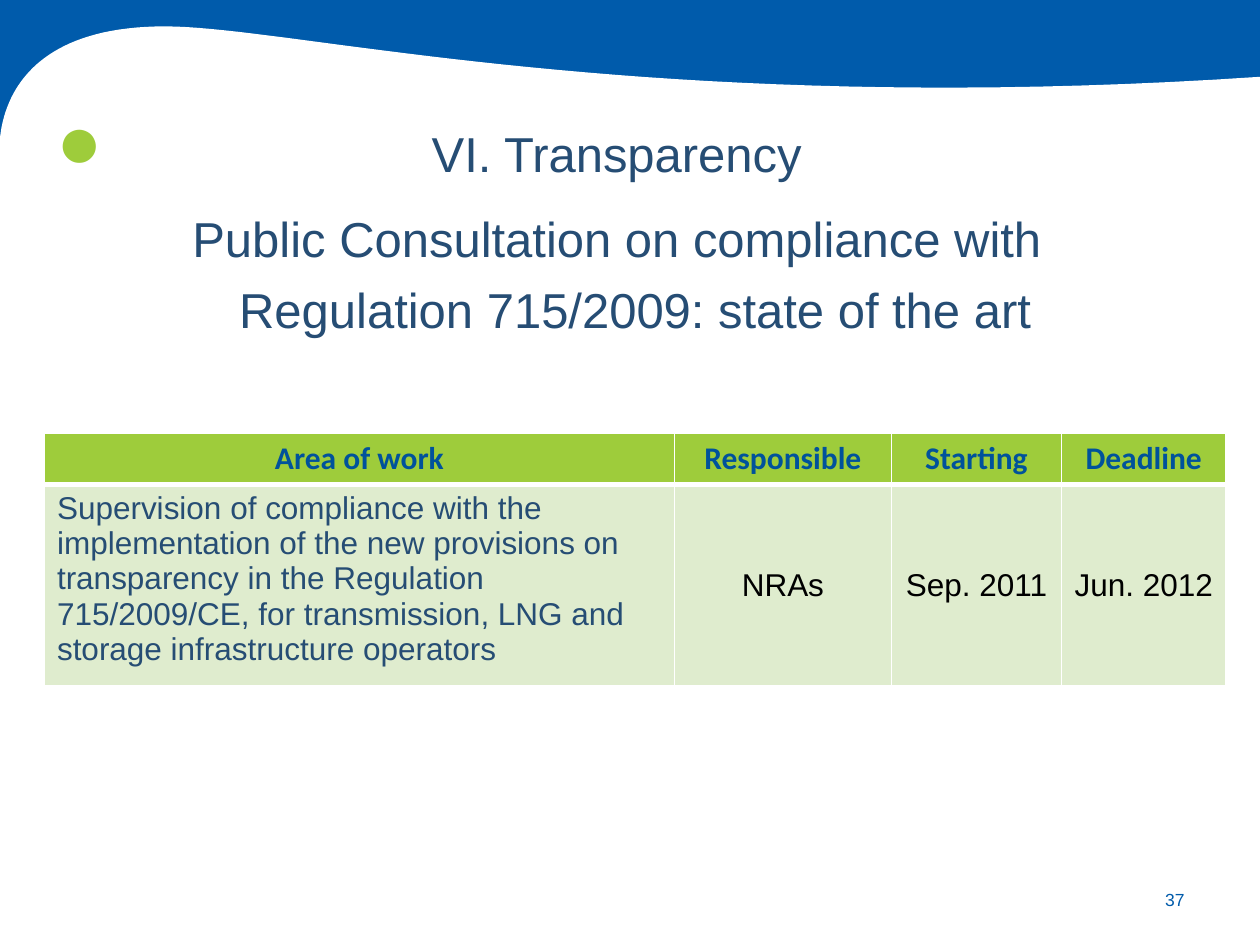
from dataclasses import dataclass

from lxml.etree import SubElement
from pptx import Presentation
from pptx.dml.color import RGBColor as Color
from pptx.enum.shapes import MSO_SHAPE as Preset
from pptx.enum.text import MSO_ANCHOR as Anchor, MSO_AUTO_SIZE as AutoSize, PP_ALIGN as Align
from pptx.oxml.ns import qn
from pptx.util import Pt


@dataclass(frozen=True)
class Theme:
    blue: str = "005BAB"
    header_blue: str = "00529B"
    navy: str = "264D74"
    green: str = "9ECC3B"
    pale_green: str = "DFECCE"
    white: str = "FFFFFF"
    black: str = "000000"
    font: str = "Arial"
    header_font: str = "Calibri"
    title_size: int = 28
    table_size: int = 18
    number_size: int = 10
    dot_size: int = 44


THEME = Theme()
TITLE_LINES = [
    "VI. Transparency",
    "Public Consultation on compliance with Regulation 715/2009: state of the art",
]
COLUMN_WIDTHS = [360, 124, 97.2, 94]
ROW_HEIGHTS = [29.2, 115.2]
TABLE_ROWS = [
    ["Area of work", "Responsible", "Starting", "Deadline"],
    [
        "Supervision of compliance with the implementation of the new provisions on "
        "transparency in the Regulation 715/2009/CE, for transmission, LNG and "
        "storage infrastructure operators",
        "NRAs",
        "Sep. 2011",
        "Jun. 2012",
    ],
]
WAVE_START = (720, 43.9)
WAVE_CURVES = [
    ((367.2, 67.7), (168.5, 15.1), (94.3, 15.1)),
    ((16.6, 15.1), (2.2, 56.9), (0, 79.2)),
]


def set_all(target, values):
    for name, value in values.items():
        setattr(target, name, value)


def paint(shape, color):
    shape.shadow.inherit = False
    shape.fill.solid()
    shape.fill.fore_color.rgb = Color.from_string(color)
    shape.line.fill.background()


def write(para, text, size, color, font=THEME.font, bold=False, align=Align.CENTER):
    para.alignment = align
    span = para.add_run()
    span.text = text
    set_all(span.font, {"size": Pt(size), "name": font, "bold": bold})
    span.font.color.rgb = Color.from_string(color)


def hang(para, left, first):
    properties = para._p.get_or_add_pPr()
    properties.set("marL", str(Pt(left)))
    properties.set("indent", str(Pt(first)))


def curve_points(start, curves, steps=40):
    points = [start]
    for first, second, end in curves:
        begin = points[-1]
        for step in range(1, steps + 1):
            t = step / steps
            weights = ((1 - t) ** 3, 3 * t * (1 - t) ** 2, 3 * t * t * (1 - t), t**3)
            corners = (begin, first, second, end)
            points.append(tuple(sum(w * c[axis] for w, c in zip(weights, corners)) for axis in (0, 1)))
    return points


def add_header_wave(page):
    band = page.shapes.add_shape(Preset.RECTANGLE, 0, 0, Pt(720), Pt(82.8))
    paint(band, THEME.blue)
    points = curve_points(WAVE_START, WAVE_CURVES) + [(0, 282), (720, 282)]
    outline = [(Pt(x), Pt(y)) for x, y in points]
    builder = page.shapes.build_freeform(*outline[0])
    builder.add_line_segments(outline[1:], close=True)
    paint(builder.convert_to_shape(), THEME.white)


def add_label(page, place, text, size, color, align, anchor):
    box = page.shapes.add_textbox(*map(Pt, place))
    set_all(box.text_frame, {"word_wrap": True, "vertical_anchor": anchor})
    para = box.text_frame.paragraphs[0]
    write(para, text, size, color, align=align)
    return para


def fill_title(page):
    title = page.shapes.title
    set_all(title, {"left": Pt(33.8), "top": Pt(60.5), "width": Pt(630), "height": Pt(186.5)})
    frame = title.text_frame
    set_all(frame, {"word_wrap": True, "auto_size": AutoSize.NONE, "vertical_anchor": Anchor.TOP})
    for index, line in enumerate(TITLE_LINES):
        para = frame.add_paragraph() if index else frame.paragraphs[0]
        before = Pt(6) if index else Pt(0)
        set_all(para, {"line_spacing": 1.2, "space_before": before, "space_after": Pt(2)})
        hang(para, 28.1, -20.9)
        write(para, line, THEME.title_size, THEME.navy)


def add_border(cell, side, width):
    line = SubElement(cell._tc.get_or_add_tcPr(), qn(f"a:ln{side}"), w=str(Pt(width)))
    fill = SubElement(line, qn("a:solidFill"))
    SubElement(fill, qn("a:srgbClr"), val=THEME.white)


def format_cell(cell, text, row, column):
    header = row == 0
    widths = {"L": 1, "R": 1, "T": 1 if header else 3, "B": 3 if header else 1}
    for side, width in widths.items():
        add_border(cell, side, width)
    cell.fill.solid()
    cell.fill.fore_color.rgb = Color.from_string(THEME.green if header else THEME.pale_green)
    para = cell.text_frame.paragraphs[0]
    if header:
        write(para, text, THEME.table_size, THEME.header_blue, THEME.header_font, True)
    elif column == 0:
        write(para, text, THEME.table_size, THEME.navy, align=Align.LEFT)
    else:
        cell.vertical_anchor = Anchor.MIDDLE
        write(para, text, THEME.table_size, THEME.black)


def add_work_table(page):
    place = (25.4, 247.7, sum(COLUMN_WIDTHS), sum(ROW_HEIGHTS))
    frame = page.shapes.add_table(len(ROW_HEIGHTS), len(COLUMN_WIDTHS), *map(Pt, place))
    table = frame.table
    for column, width in zip(table.columns, COLUMN_WIDTHS):
        column.width = Pt(width)
    for row, height in zip(table.rows, ROW_HEIGHTS):
        row.height = Pt(height)
    for row, texts in enumerate(TABLE_ROWS):
        for column, text in enumerate(texts):
            format_cell(table.cell(row, column), text, row, column)


def main():
    deck = Presentation()
    set_all(deck, {"slide_width": Pt(720), "slide_height": Pt(540)})
    page = deck.slides.add_slide(deck.slide_layouts[5])
    add_header_wave(page)
    add_label(page, (643.7, 499.7, 40.3, 28.8), "37", THEME.number_size, THEME.blue,
              Align.RIGHT, Anchor.MIDDLE)
    dot = add_label(page, (25.2, 41, 39.6, 67.7), "●", THEME.dot_size, THEME.green,
                    Align.CENTER, Anchor.BOTTOM)
    hang(dot, 28.1, -28.1)
    fill_title(page)
    page.shapes._spTree.append(page.shapes.title._element)
    add_work_table(page)
    deck.save("out.pptx")


if __name__ == "__main__":
    main()
